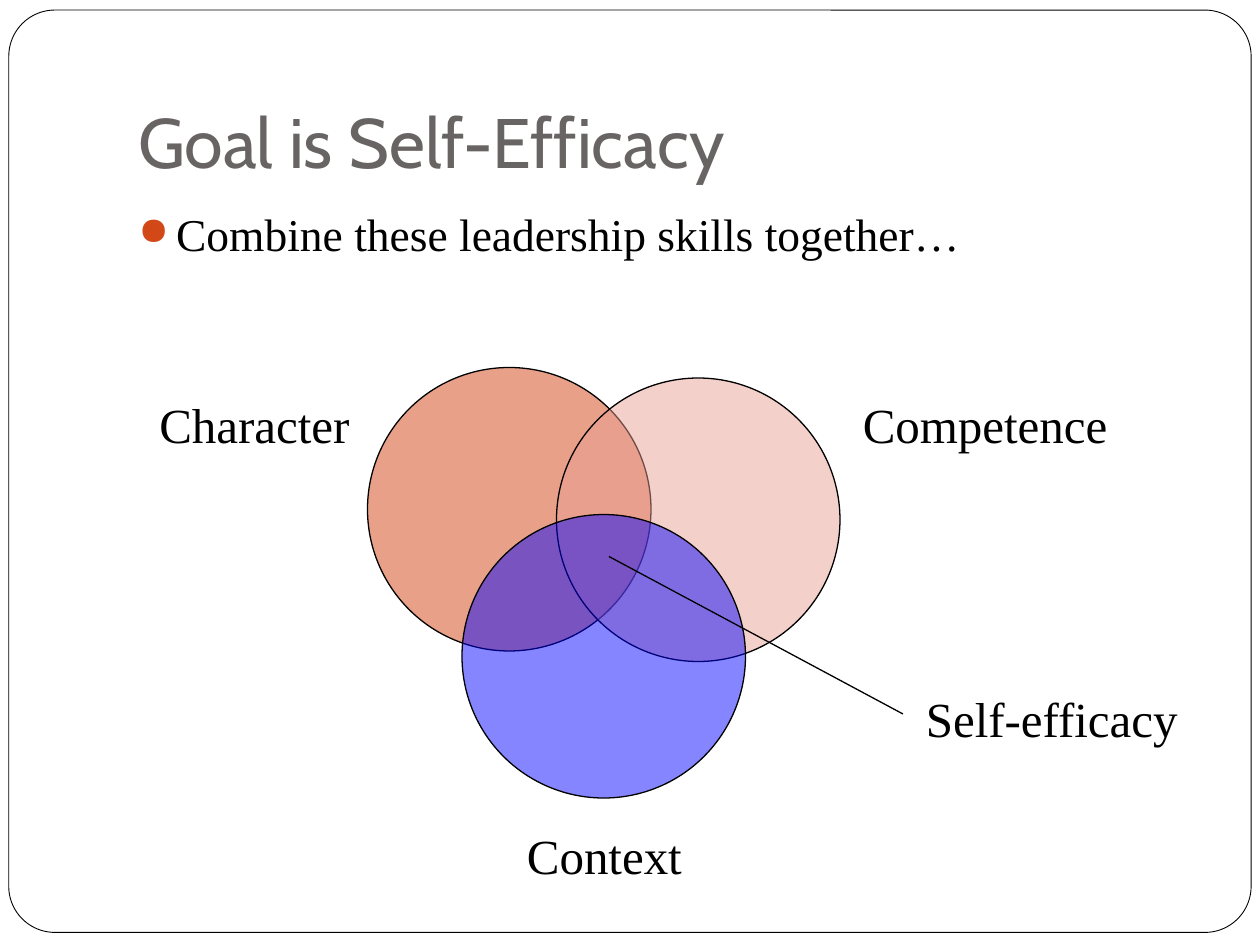
from lxml.etree import SubElement as Sub
from pptx import Presentation
from pptx.dml.color import RGBColor as RGB
from pptx.enum.shapes import MSO_CONNECTOR as Link, MSO_SHAPE as Shape
from pptx.enum.text import MSO_ANCHOR as Anchor
from pptx.oxml.ns import qn
from pptx.util import Inches, Pt

BLACK = RGB(0, 0, 0)
WHITE = RGB(255, 255, 255)
GRAY = RGB(0x69, 0x64, 0x64)
RUST = RGB(0xD3, 0x48, 0x17)
PINK = RGB(0xE9, 0x9D, 0x93)
BLUE = RGB(0, 0, 255)

WIDE, HIGH = Inches(10), Inches(7.5)
COLS, ROWS = 120, 90
SERIF = "Times New Roman"
SIZE = 27  # circle width in columns

# name, label place and width, circle place, colour, opacity
SKILLS = [
    ("Character", (14, 37, 20.8), (35, 35), RUST, 51),
    ("Competence", (81, 37, 25.9), (53, 36), PINK, 48),
    ("Context", (49, 78, 17.4), (44, 49), BLUE, 48),
]


def grid(*cells):
    """Turn column, row, column, row ... into lengths."""
    steps = (WIDE / COLS, HIGH / ROWS)
    return [round(n * steps[i % 2]) for i, n in enumerate(cells)]


def apply(item, form):
    for key, val in form.items():
        setattr(item, key, val)


def text(slide, words, box, font, frame):
    area = slide.shapes.add_textbox(*grid(*box)).text_frame
    apply(area, frame)
    par = area.paragraphs[0]
    run = par.add_run()
    run.text = words
    tint = font["color"]
    apply(run.font, {k: v for k, v in font.items() if k != "color"})
    run.font.color.rgb = tint
    return par


def label(slide, words, col, row, width):
    font = {"name": SERIF, "size": Pt(28), "color": BLACK}
    text(slide, words, (col, row, width, 6.8), font, {"word_wrap": False})


def bullet(par):
    par.space_before = Pt(5.8)
    props = par._p.get_or_add_pPr()
    apply_xml = {"marL": Inches(0.3), "indent": -Inches(0.3)}
    for key, val in apply_xml.items():
        props.set(key, str(val))
    Sub(Sub(props, qn("a:buClr")), qn("a:srgbClr"), val=str(RUST))
    Sub(props, qn("a:buSzPct"), val="85000")
    Sub(props, qn("a:buChar"), char="●")


def solid(slide, kind, box, fill, width):
    item = slide.shapes.add_shape(kind, *box)
    item.shadow.inherit = False
    item.fill.solid()
    item.fill.fore_color.rgb = fill
    item.line.color.rgb = BLACK
    item.line.width = Pt(width)
    return item


def circle(slide, col, row, fill, alpha):
    box = grid(col, row, SIZE, SIZE)
    item = solid(slide, Shape.OVAL, box, fill, 0.75)
    tint = item._element.spPr.find(qn("a:solidFill"))[0]
    Sub(tint, qn("a:alpha"), val=str(alpha * 1000))


def line(slide, start, end):
    item = slide.shapes.add_connector(Link.STRAIGHT, *grid(*start, *end))
    item.line.color.rgb = BLACK
    item.line.width = Pt(0.75)
    Sub(item._element.spPr, qn("a:effectLst"))


def main():
    deck = Presentation()
    apply(deck, {"slide_width": WIDE, "slide_height": HIGH})
    slide = deck.slides.add_slide(deck.slide_layouts[6])

    box = [Inches(n) for n in (0.07, 0.08, 9.86, 7.32)]
    border = solid(slide, Shape.ROUNDED_RECTANGLE, box, WHITE, 0.5)
    border.adjustments[0] = 0.05

    text(slide, "Goal is Self-Efficacy", (12, 3.6, 102, 15),
         {"name": "Cabin", "size": Pt(40), "color": GRAY},
         {"word_wrap": True, "vertical_anchor": Anchor.BOTTOM,
          "margin_bottom": Inches(0.1)})
    bullet(text(slide, "Combine these leadership skills together…",
                (12, 19, 102, 60),
                {"name": SERIF, "size": Pt(26), "color": BLACK},
                {"word_wrap": True}))

    for name, place, spot, fill, alpha in SKILLS:
        circle(slide, *spot, fill, alpha)
        label(slide, name, *place)

    line(slide, (58, 53), (86, 68))
    label(slide, "Self-efficacy", 87, 65, 26.6)
    deck.save("out.pptx")


if __name__ == "__main__":
    main()
